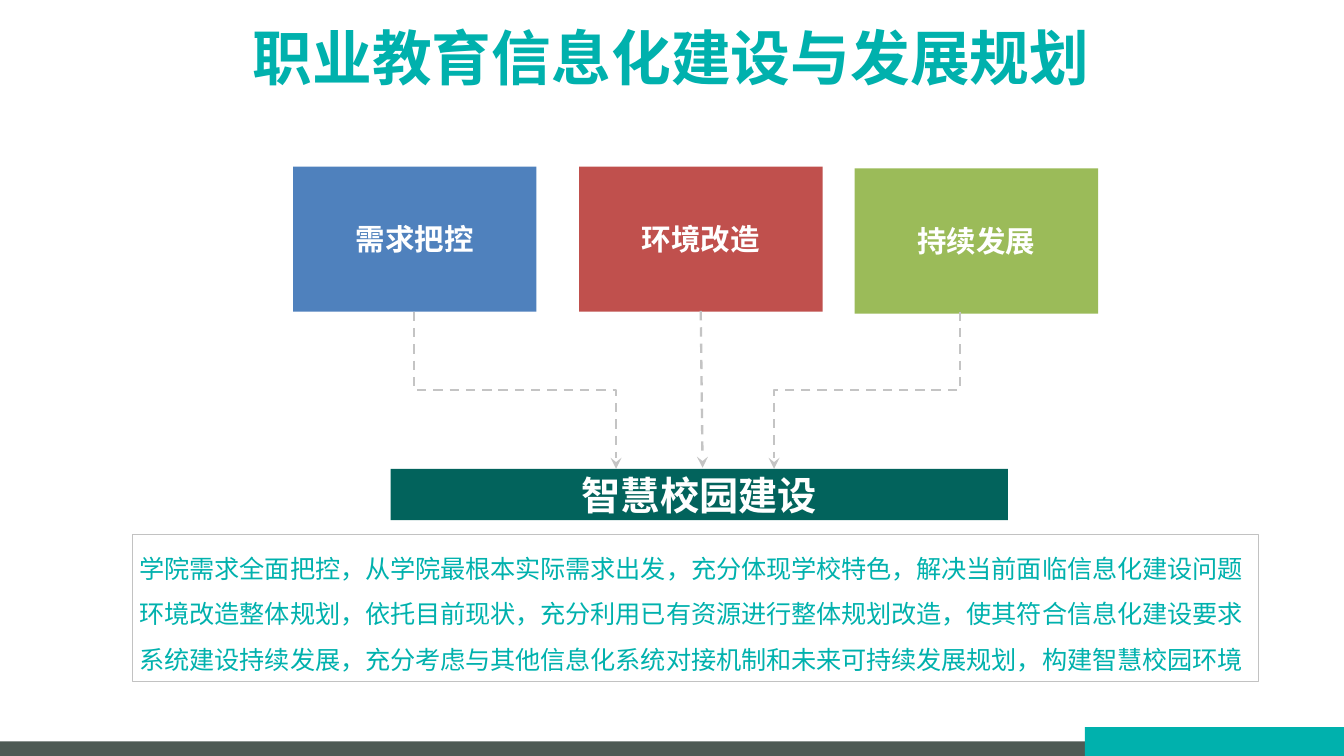
from lxml import etree
from pptx import Presentation
from pptx.dml.color import RGBColor
from pptx.enum import dml, shapes, text
from pptx.oxml import ns
from pptx.util import Pt

FONT = "Noto Sans CJK SC"
TEAL, WHITE, GREY = "00B1AD", "FFFFFF", "C4C4C4"
TITLE = "职业教育信息化建设与发展规划"
GOAL = "智慧校园建设"
PILLARS = [
    ("需求把控", "4F81BD", 157, 89.2),
    ("环境改造", "C0504D", 310.3, 89.2),
    ("持续发展", "9BBB59", 457.9, 90.2),
]
PILLAR_SIZE = (130.4, 77.8)
DETAILS = [
    "学院需求全面把控，从学院最根本实际需求出发，充分体现学校特色，解决当前面临信息化建设问题",
    "环境改造整体规划，依托目前现状，充分利用已有资源进行整体规划改造，使其符合信息化建设要求",
    "系统建设持续发展，充分考虑与其他信息化系统对接机制和未来可持续发展规划，构建智慧校园环境",
]
FOOTER = [("4E5A54", 0, 397.2, 720, 7.8), (TEAL, 581.2, 389.5, 138.8, 15.5)]
GOAL_BOX = (209.3, 251.2, 330.6, 27.4)
ELBOWS = [((221.8, 167), (330, 251.2)), ((514.3, 167), (414.7, 251.2))]
STRAIGHT = ((375.4, 166.6), (376.4, 250.6))

deck = Presentation()
deck.slide_width, deck.slide_height = Pt(720), Pt(405)
slide = deck.slides.add_slide(deck.slide_layouts[6])


def rgb(code):
    return RGBColor.from_string(code)


def write(frame, lines, size, color, bold=True, spacing=None,
          align=text.PP_ALIGN.CENTER, anchor=text.MSO_ANCHOR.MIDDLE, margins=(7.2, 3.6, 7.2, 3.6)):
    frame.word_wrap = True
    frame.vertical_anchor = anchor
    frame.margin_left, frame.margin_top, frame.margin_right, frame.margin_bottom = map(Pt, margins)
    for i, line in enumerate(lines):
        paragraph = frame.add_paragraph() if i else frame.paragraphs[0]
        paragraph.alignment = align
        if spacing:
            paragraph.line_spacing = spacing
        run = paragraph.add_run()
        run.text = line
        run.font.size, run.font.bold, run.font.name = Pt(size), bold, FONT
        run.font.color.rgb = rgb(color)
        etree.SubElement(run.font._element, ns.qn("a:ea"), typeface=FONT)


def rectangle(box, fill=None, line=None):
    shape = slide.shapes.add_shape(shapes.MSO_SHAPE.RECTANGLE, *map(Pt, box))
    shape.shadow.inherit = False
    if fill:
        shape.fill.solid()
        shape.fill.fore_color.rgb = rgb(fill)
    else:
        shape.fill.background()
    if line:
        shape.line.color.rgb = rgb(line)
        shape.line.width = Pt(0.25)
    else:
        shape.line.fill.background()
    return shape


def arrow(kind, start, end):
    connector = slide.shapes.add_connector(kind, *map(Pt, (*start, *end)))
    connector.line.color.rgb = rgb(GREY)
    connector.line.width = Pt(1.25)
    connector.line.dash_style = dml.MSO_LINE.DASH
    etree.SubElement(connector.line._get_or_add_ln(), ns.qn("a:tailEnd"), type="stealth")
    etree.SubElement(connector._element.spPr, ns.qn("a:effectLst"))
    return connector


def elbow_down(start, end):
    (x1, y1), (x2, y2) = start, end
    center_x, center_y = (x1 + x2) / 2, (y1 + y2) / 2
    half_w, half_h = (y2 - y1) / 2, abs(x2 - x1) / 2
    rightward = x2 > x1
    if rightward:
        half_w = -half_w
    connector = arrow(shapes.MSO_CONNECTOR.ELBOW,
                      (center_x - half_w, center_y - half_h),
                      (center_x + half_w, center_y + half_h))
    degrees = 270 if rightward else 90
    connector._element.spPr.find(ns.qn("a:xfrm")).set("rot", str(degrees * 60000))


for color, *box in FOOTER:
    rectangle(box, color)

title = slide.shapes.add_textbox(*map(Pt, (31, 8.6, 657.4, 43.9)))
write(title.text_frame, [TITLE], 32, TEAL)

for label, color, left, top in PILLARS:
    pillar = rectangle((left, top, *PILLAR_SIZE), color)
    write(pillar.text_frame, [label], 15.8, WHITE)

details = rectangle((70.8, 286, 603.4, 79.2), line="C2C2C2")
write(details.text_frame, DETAILS, 13.5, TEAL, bold=False, spacing=1.5,
      align=text.PP_ALIGN.LEFT, anchor=text.MSO_ANCHOR.BOTTOM, margins=(4, 2, 4, 4))

for start, end in ELBOWS:
    elbow_down(start, end)
arrow(shapes.MSO_CONNECTOR.STRAIGHT, *STRAIGHT)

goal = rectangle(GOAL_BOX, "02635C")
write(goal.text_frame, [GOAL], 21, WHITE, margins=(4, 2, 4, 2))

deck.save("out.pptx")
